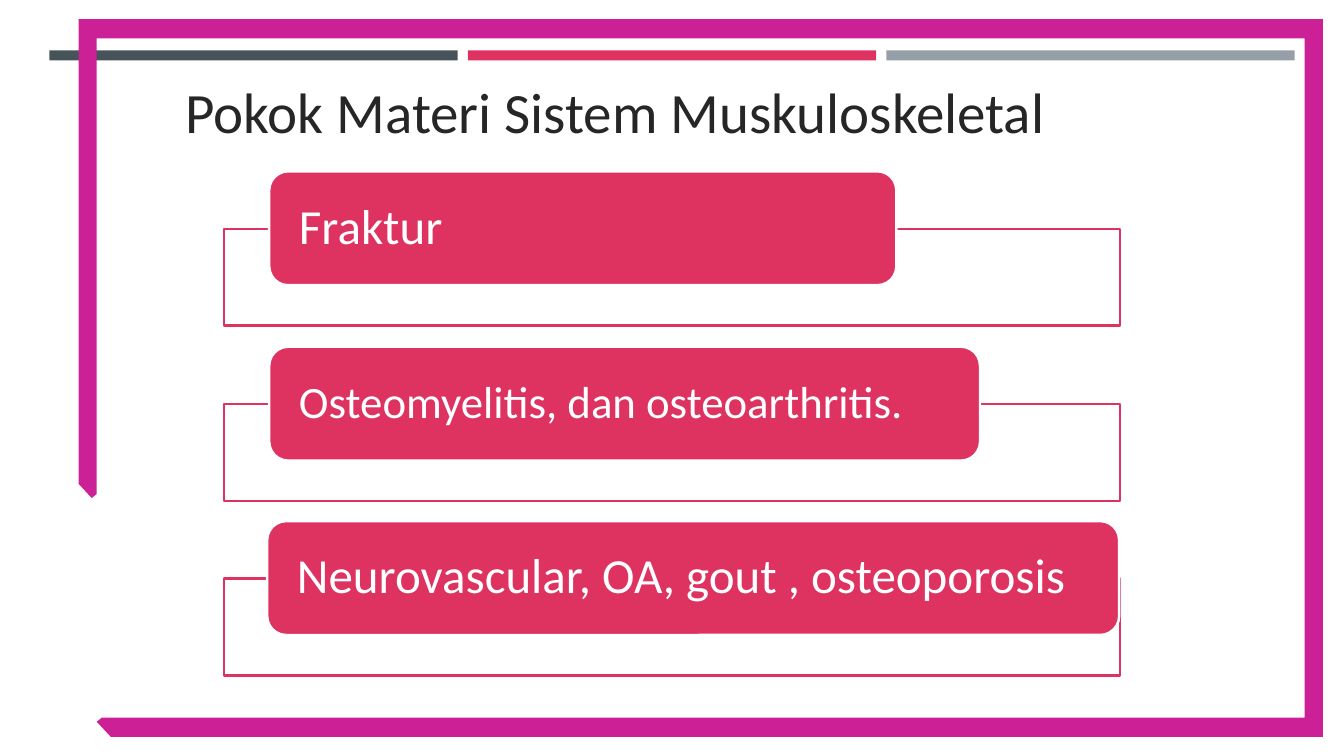
"""Build the topic overview slide for the musculoskeletal system."""
from dataclasses import dataclass

import pptx
import pptx.dml.color
import pptx.enum.shapes
import pptx.enum.text
import pptx.oxml
import pptx.oxml.ns
import pptx.util

PX = 9144
SHAPE = pptx.enum.shapes.MSO_SHAPE
ALIGN = pptx.enum.text.PP_ALIGN
ANCHOR = pptx.enum.text.MSO_ANCHOR


@dataclass(frozen=True)
class Theme:
    font: str = "Calibri"
    accent: str = "DE3261"
    frame: str = "CC2097"
    bars: tuple[str, ...] = ("465359", "DE3261", "969FA7")
    title: str = "262626"
    white: str = "FFFFFF"
    title_size: float = 40.7
    outline: float = 1.75


@dataclass(frozen=True)
class Topic:
    text: str
    left: int
    width: int
    size: int


THEME = Theme()
TOPICS = (
    Topic("Fraktur", 267, 622, 35),
    Topic("Osteomyelitis, dan osteoarthritis.", 267, 705, 32),
    Topic("Neurovascular, OA, gout , osteoporosis", 265, 845, 35),
)
FRAME = (
    (78, 19), (1312, 19), (1312, 731), (110, 731), (96, 716), (101, 712),
    (1294, 712), (1294, 38), (96, 38), (96, 490), (91, 494), (78, 480),
)


def px(n: int) -> int:
    """Convert slide px to EMU."""
    return pptx.util.Emu(n * PX)


def rgb(color: str) -> pptx.dml.color.RGBColor:
    """Read a hex colour."""
    return pptx.dml.color.RGBColor.from_string(color)


def paint(sp, fill: str, line: str | None = None) -> None:
    """Set a flat fill and an optional outline, without shadow."""
    sp.shadow.inherit = False
    sp.fill.solid()
    sp.fill.fore_color.rgb = rgb(fill)
    if line:
        sp.line.color.rgb = rgb(line)
        sp.line.width = pptx.util.Pt(THEME.outline)
    else:
        sp.line.fill.background()


def add_box(s, kind, left: int, top: int, width: int, height: int, fill: str,
            line: str | None = None):
    """Add a painted preset shape."""
    sp = s.shapes.add_shape(kind, px(left), px(top), px(width), px(height))
    paint(sp, fill, line)
    return sp


def write(tf, text: str, size: float, color: str):
    """Write one left-aligned, vertically centred paragraph and return it."""
    tf.text = text
    tf.word_wrap = True
    tf.auto_size = pptx.enum.text.MSO_AUTO_SIZE.NONE
    tf.vertical_anchor = ANCHOR.MIDDLE
    p = tf.paragraphs[0]
    p.alignment = ALIGN.LEFT
    r = p.runs[0]
    r.font.name = THEME.font
    r.font.size = pptx.util.Pt(size)
    r.font.color.rgb = rgb(color)
    return p


def add_frame(s) -> None:
    """Draw the open border around the slide."""
    builder = s.shapes.build_freeform(*FRAME[0], scale=float(PX))
    builder.add_line_segments(FRAME[1:], close=True)
    paint(builder.convert_to_shape(), THEME.frame)


def add_topic(s, topic: Topic, top: int) -> None:
    """Draw a topic card over its outlined panel."""
    panel = add_box(s, SHAPE.RECTANGLE, 222, top + 57, 889, 96, THEME.white, THEME.accent)
    color = panel.fill._xPr.find(".//" + pptx.oxml.ns.qn("a:srgbClr"))
    color.append(pptx.oxml.parse_xml(
        f'<a:alpha {pptx.oxml.ns.nsdecls("a")} val="90000"/>'))
    card = add_box(s, SHAPE.ROUNDED_RECTANGLE, topic.left, top, topic.width, 113,
                   THEME.accent, THEME.white)
    tf = card.text_frame
    tf.margin_left = tf.margin_right = px(24)
    tf.margin_top = tf.margin_bottom = 0
    p = write(tf, topic.text, topic.size, THEME.white)
    p.line_spacing = 0.9


def main() -> None:
    """Build and save the slide."""
    prs = pptx.Presentation()
    prs.slide_width, prs.slide_height = px(1333), px(750)
    s = prs.slides.add_slide(prs.slide_layouts.get_by_name("Title Only"))
    title = s.shapes.title
    title.left, title.top, title.width, title.height = px(174), px(70), px(1118), px(79)
    write(title.text_frame, "Pokok Materi Sistem Muskuloskeletal",
          THEME.title_size, THEME.title)
    for i, color in enumerate(THEME.bars):
        add_box(s, SHAPE.RECTANGLE, 49 + 415 * i, 50, 405, 10, color)
    add_frame(s)
    for i, topic in enumerate(TOPICS):
        add_topic(s, topic, 170 + round(173.5 * i))
    prs.save("out.pptx")


if __name__ == "__main__":
    main()
